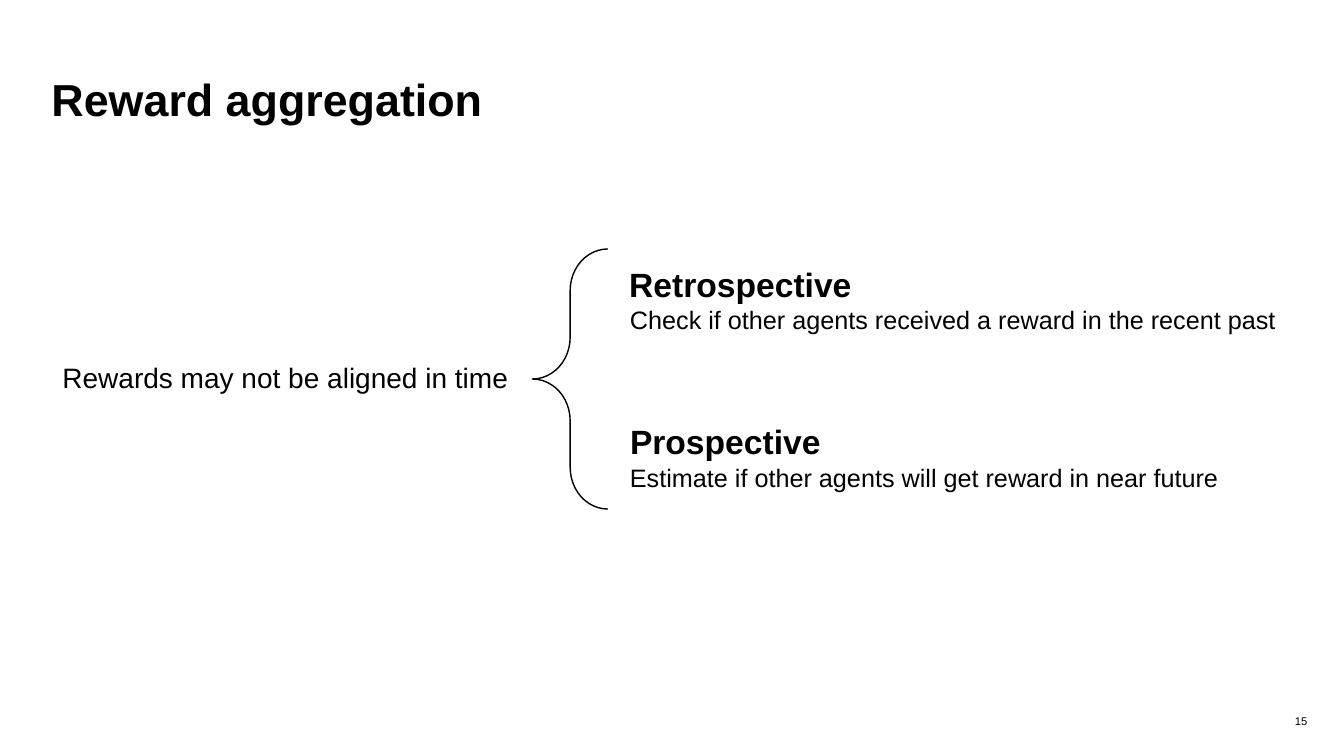
"""Build a slide on retrospective and prospective reward aggregation."""
from dataclasses import dataclass

from lxml.etree import SubElement
from pptx import Presentation
from pptx.dml.color import RGBColor
from pptx.enum.shapes import MSO_SHAPE as Kind
from pptx.enum.text import MSO_ANCHOR as Anchor, MSO_AUTO_SIZE as Fit, PP_ALIGN as Align
from pptx.oxml.ns import qn
from pptx.util import Inches, Pt


@dataclass(frozen=True)
class Theme:
    font: str = "Arial"
    ink: RGBColor = RGBColor(0, 0, 0)
    paper: RGBColor = RGBColor(255, 255, 255)
    title: int = 32
    head: int = 24
    claim: int = 20
    note: int = 18
    page: int = 8


theme = Theme()


def place(box, left, top, width, height):
    box.left, box.top = Inches(left), Inches(top)
    box.width, box.height = Inches(width), Inches(height)


def write(box, text, size, bold=False, inset=(0.1, 0.05, 0.1, 0.05), align=Align.LEFT, **frame):
    body = box.text_frame
    body.text = text
    sides = ("margin_left", "margin_top", "margin_right", "margin_bottom")
    format = dict(zip(sides, map(Inches, inset)))
    format |= {"word_wrap": True, "auto_size": Fit.NONE, "vertical_anchor": Anchor.TOP}
    for name, value in (format | frame).items():
        setattr(body, name, value)
    line = body.paragraphs[0]
    line.alignment, line.space_before = align, Pt(0)
    font = line.runs[0].font
    for name, value in {"name": theme.font, "size": Pt(size), "bold": bold}.items():
        setattr(font, name, value)
    font.color.rgb = theme.ink


deck = Presentation()
deck.slide_width, deck.slide_height = Inches(13.33), Inches(7.5)
slide = deck.slides.add_slide(deck.slide_layouts[1])
shapes = slide.shapes

title = shapes.title
place(title, 0.35, 0.65, 12.62, 0.62)
title.fill.solid()
title.fill.fore_color.rgb = theme.paper
write(title, "Reward aggregation", theme.title, True, (0.16, 0.06, 0.16, 0))

retro = slide.placeholders[1]
place(retro, 6.09, 2.62, 2.6, 0.5)
write(retro, "Retrospective", theme.head, True, (0.15, 0, 0.16, 0))
props = retro.text_frame.paragraphs[0]._p.get_or_add_pPr()
props.set("marL", "0")
props.set("indent", "0")
SubElement(props, qn("a:buNone"))

brace = shapes.add_shape(Kind.LEFT_BRACE, Inches(5.28), Inches(2.47), Inches(0.75), Inches(2.58))
brace.shadow.inherit = False
brace.fill.background()
brace.line.color.rgb = theme.ink
brace.line.width = Pt(1)
brace.adjustments[0], brace.adjustments[1] = 0.55, 0.5

labels = [
    ("Rewards may not be aligned in time", theme.claim, False, (0.52, 3.53, 4.75, 0.44)),
    ("Check if other agents received a reward in the recent past", theme.note, False,
     (6.15, 2.97, 6.67, 0.4)),
    ("Prospective", theme.head, True, (6.15, 4.13, 2.18, 0.5)),
    ("Estimate if other agents will get reward in near future", theme.note, False,
     (6.15, 4.54, 6.06, 0.4)),
]
for text, size, bold, spot in labels:
    label = shapes.add_textbox(*map(Inches, spot))
    write(label, text, size, bold, auto_size=Fit.SHAPE_TO_FIT_TEXT)

page = shapes.add_textbox(Inches(12.71), Inches(6.9), Inches(0.39), Inches(0.51))
write(page, "15", theme.page, inset=(0, 0, 0, 0), align=Align.CENTER,
      word_wrap=False, vertical_anchor=Anchor.MIDDLE)

deck.save("out.pptx")
